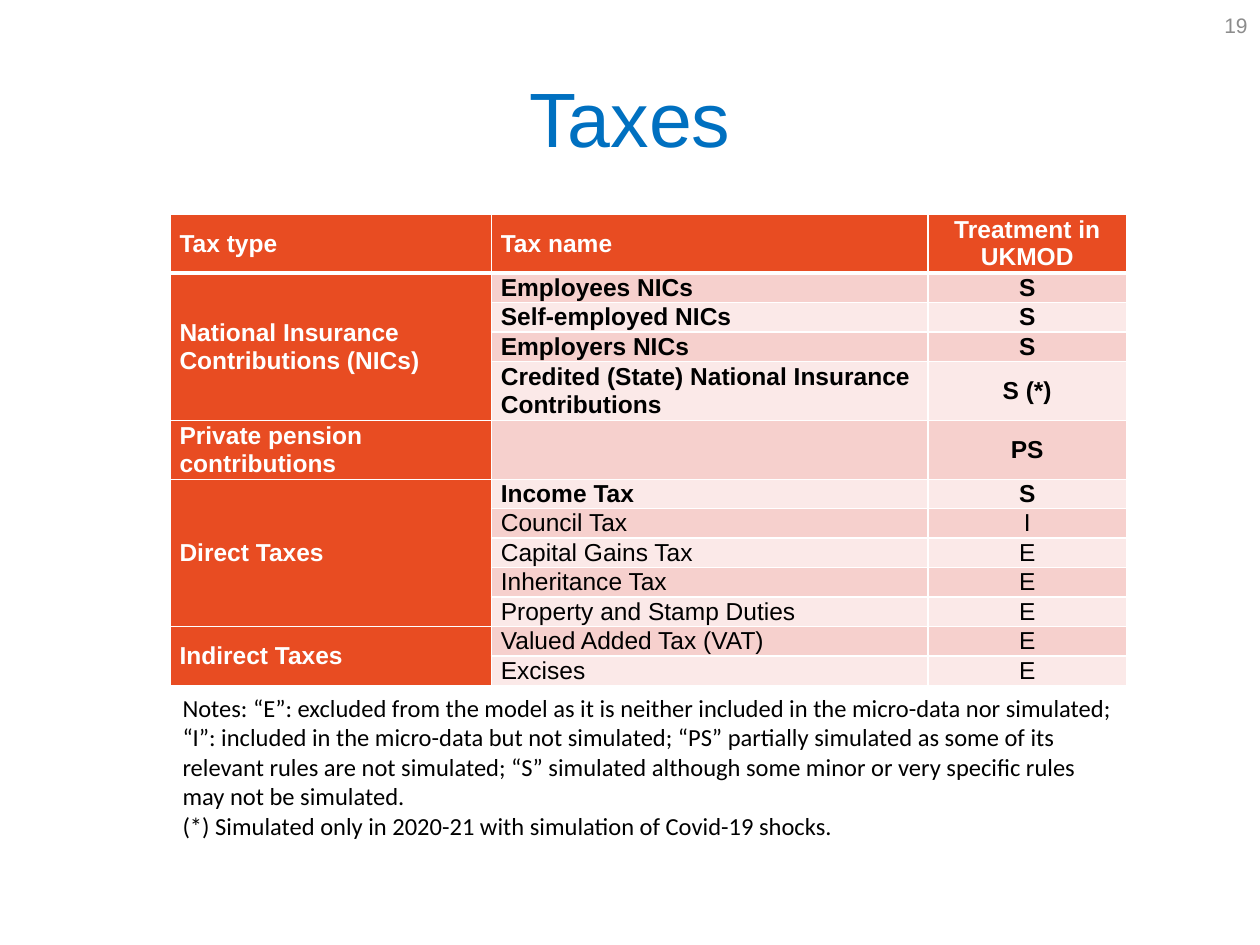
from copy import deepcopy

from lxml import etree
from pptx import Presentation
from pptx.dml.color import RGBColor
from pptx.enum import text as tx
from pptx.oxml import ns
from pptx.util import Pt

HUES = {"white": "FFFFFF", "black": "000000", "blue": "0070C0", "grey": "8C8C8C",
        "red": "E84C22", "dark": "F6D0CD", "light": "FBE9E8"}
LEFT, MID, RIGHT = tx.PP_ALIGN.LEFT, tx.PP_ALIGN.CENTER, tx.PP_ALIGN.RIGHT

HEAD = ("Tax type", "Tax name", "Treatment in UKMOD")
# Tax type, then (name, treatment, bold) for each row
GROUPS = [
    ("National Insurance Contributions (NICs)", [
        ("Employees NICs", "S", True),
        ("Self-employed NICs", "S", True),
        ("Employers NICs", "S", True),
        ("Credited (State) National Insurance Contributions", "S (*)", True)]),
    ("Private pension contributions", [("", "PS", True)]),
    ("Direct Taxes", [
        ("Income Tax", "S", True),
        ("Council Tax", "I", False),
        ("Capital Gains Tax", "E", False),
        ("Inheritance Tax", "E", False),
        ("Property and Stamp Duties", "E", False)]),
    ("Indirect Taxes", [
        ("Valued Added Tax (VAT)", "E", False),
        ("Excises", "E", False)]),
]
NOTES = (
    "Notes: “E”: excluded from the model as it is neither included in the "
    "micro-data nor simulated; “I”: included in the micro-data but not simulated; "
    "“PS” partially simulated as some of its relevant rules are not simulated; "
    "“S” simulated although some minor or very specific rules may not be simulated."
    "\v(*) Simulated only in 2020-21 with simulation of Covid-19 shocks.")


def write(frame, words, size=14, face="Arial", hue="black", bold=False,
          align=LEFT, after=0, lead=None):
    para = frame.paragraphs[0]
    para.text = words
    para.alignment = align
    para.space_after = Pt(after)
    if lead:
        para.line_spacing = lead
    for run in para.runs:
        font = run.font
        font.size, font.name, font.bold = Pt(size), face, bold
        font.color.rgb = RGBColor.from_string(HUES[hue])
    # Line breaks take the format of the text
    for gap in para._p.findall(ns.qn("a:br")):
        gap.insert(0, deepcopy(para.runs[0].font._element))


class Deck:
    def __init__(self):
        self.prs = Presentation()
        self.prs.slide_width, self.prs.slide_height = Pt(720), Pt(540)
        self.slide = self.prs.slides.add_slide(self.prs.slide_layouts[5])

    def title(self, words, x, y, w, h, **style):
        box = self.slide.shapes.title
        box.left, box.top, box.width, box.height = Pt(x), Pt(y), Pt(w), Pt(h)
        box.text_frame.vertical_anchor = tx.MSO_ANCHOR.MIDDLE
        write(box.text_frame, words, **style)

    def text(self, words, x, y, w, h, anchor=tx.MSO_ANCHOR.TOP, **style):
        box = self.slide.shapes.add_textbox(Pt(x), Pt(y), Pt(w), Pt(h))
        box.text_frame.word_wrap = True
        box.text_frame.vertical_anchor = anchor
        write(box.text_frame, words, **style)
        return box

    def table(self, x, y, wides, highs):
        grid = self.slide.shapes.add_table(
            len(highs), len(wides), Pt(x), Pt(y), Pt(sum(wides)), Pt(sum(highs))).table
        for col, wide in zip(grid.columns, wides):
            col.width = Pt(wide)
        for row, high in zip(grid.rows, highs):
            row.height = Pt(high)
        return grid

    def cell(self, grid, row, col, words, fill, **style):
        box = grid.cell(row, col)
        box.margin_left = box.margin_right = Pt(5.4)
        box.margin_top = box.margin_bottom = 0
        box.vertical_anchor = tx.MSO_ANCHOR.MIDDLE
        # White rules, thicker under the header
        props = box._tc.get_or_add_tcPr()
        thick = {"T": row == 1, "B": row == 0}
        for side in "LRTB":
            line = etree.SubElement(props, ns.qn(f"a:ln{side}"),
                                    w=str(Pt(3 if thick.get(side) else 1)))
            paint = etree.SubElement(line, ns.qn("a:solidFill"))
            etree.SubElement(paint, ns.qn("a:srgbClr"), val=HUES["white"])
        box.fill.solid()
        box.fill.fore_color.rgb = RGBColor.from_string(HUES[fill])
        write(box.text_frame, words, align=MID if col == 2 else LEFT,
              lead=1.0, **style)


def main():
    deck = Deck()

    # Title and page number
    deck.title("Taxes", 36, 21.6, 648, 90, size=44, hue="blue", align=MID)
    deck.text("19", 552, 0, 168, 28.8, anchor=tx.MSO_ANCHOR.MIDDLE,
              size=12, hue="grey", align=RIGHT)

    # Tax table
    highs = [26.6] + [14.4] * 12
    highs[5] = 8.6
    grid = deck.table(97.2, 122.4, [183.6, 249.6, 113.2], highs)
    lead = {"fill": "red", "hue": "white", "bold": True, "after": 8}
    for col, words in enumerate(HEAD):
        deck.cell(grid, 0, col, words, **lead)
    row = 1
    for kind, taxes in GROUPS:
        first = row
        for name, mark, bold in taxes:
            fill = "dark" if row % 2 else "light"
            deck.cell(grid, row, 0, kind if row == first else "", **lead)
            for col, words in ((1, name), (2, mark)):
                deck.cell(grid, row, col, words, fill, bold=bold,
                          after=0 if words.startswith("Credited") else 8)
            row += 1
        if len(taxes) > 1:
            grid.cell(first, 0).merge(grid.cell(row - 1, 0))

    # Notes
    notes = deck.text(NOTES, 97.2, 392.4, 546.5, 92.2, face="Calibri", after=8)
    notes.text_frame.auto_size = tx.MSO_AUTO_SIZE.SHAPE_TO_FIT_TEXT

    deck.prs.save("out.pptx")


if __name__ == "__main__":
    main()
